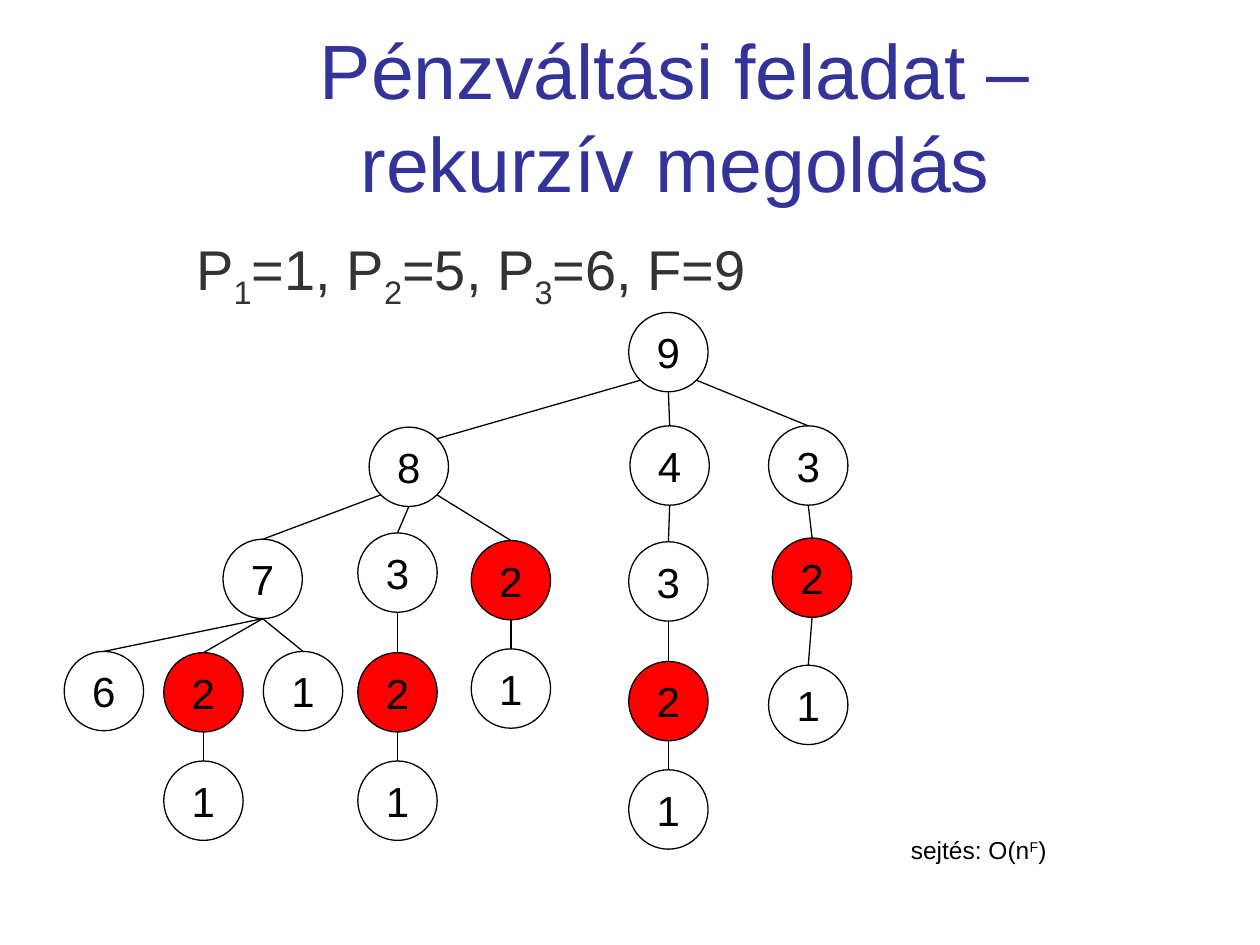
import math
from dataclasses import dataclass

import pptx
import pptx.dml.color
import pptx.enum.shapes
import pptx.enum.text
import pptx.oxml
import pptx.oxml.ns
import pptx.util

Inches = pptx.util.Inches
Align = pptx.enum.text.PP_ALIGN
Anchor = pptx.enum.text.MSO_ANCHOR
Fit = pptx.enum.text.MSO_AUTO_SIZE


@dataclass(frozen=True)
class Theme:
    font: str = "Arial"
    title: str = "333399"
    body: str = "333333"
    ink: str = "000000"
    mark: str = "FF0000"
    head: int = 44
    sub: int = 32
    node: int = 24
    note: int = 14
    line: float = 0.75


THEME = Theme()
SIZE = 0.63  # node diameter

# Each key is the path of amounts from the root; its last digit is the label.
# Values are the left and top of the node within the tree's box.
NODES = {
    "9": (4.48, 0),
    "98": (2.42, 0.91), "94": (4.49, 0.9), "93": (5.59, 0.9),
    "987": (1.26, 1.8), "983": (2.33, 1.75), "982": (3.23, 1.81),
    "943": (4.48, 1.82), "932": (5.62, 1.79),
    "9876": (0, 2.69), "9872": (0.79, 2.7), "9871": (1.58, 2.69),
    "9832": (2.33, 2.7), "9821": (3.23, 2.67),
    "9432": (4.48, 2.77), "9321": (5.59, 2.8),
    "98721": (0.79, 3.56), "98321": (2.33, 3.56), "94321": (4.48, 3.63),
}
# Side where an edge leaves the parent or meets the child: -1 left, 1 right
LEAVE = {"98": -1, "93": 1, "987": -1, "982": 1}
MEET = {"98": 1}


def color(code):
    return pptx.dml.color.RGBColor.from_string(code)


def write(para, text, size, ink, base=0):
    run = para.add_run()
    run.text = text
    run.font.name = THEME.font
    run.font.size = pptx.util.Pt(size)
    run.font.color.rgb = color(ink)
    if base:
        run.font._element.set("baseline", str(base * 1000))


def add_title(slide, box, text):
    title = slide.shapes.title
    title.left, title.top, title.width, title.height = map(Inches, box)
    frame = title.text_frame
    frame.auto_size = Fit.NONE
    frame.vertical_anchor = Anchor.MIDDLE
    para = frame.paragraphs[0]
    para.alignment = Align.CENTER
    write(para, text, THEME.head, THEME.title)


def add_text(slide, box, runs, size, ink, inset=0.05):
    frame = slide.shapes.add_textbox(*map(Inches, box)).text_frame
    frame.word_wrap = False
    frame.margin_top = Inches(inset)
    for text, base in runs:
        write(frame.paragraphs[0], text, size, ink, base)


def add_node(slide, left, top, label):
    kind = pptx.enum.shapes.MSO_SHAPE.OVAL
    node = slide.shapes.add_shape(
        kind, Inches(left), Inches(top), Inches(SIZE), Inches(SIZE))
    node.shadow.inherit = False
    if label == "2":
        node.fill.solid()
        node.fill.fore_color.rgb = color(THEME.mark)
    else:
        node.fill.background()
    node.line.color.rgb = color(THEME.ink)
    node.line.width = pptx.util.Pt(THEME.line)
    frame = node.text_frame
    frame.vertical_anchor = Anchor.MIDDLE
    para = frame.paragraphs[0]
    para.alignment = Align.CENTER
    write(para, label, THEME.node, THEME.ink)


def add_edge(slide, start, end):
    kind = pptx.enum.shapes.MSO_CONNECTOR.STRAIGHT
    edge = slide.shapes.add_connector(kind, *map(Inches, start + end))
    edge.line.color.rgb = color(THEME.ink)
    edge.line.width = pptx.util.Pt(THEME.line)
    edge._element.spPr.append(pptx.oxml.parse_xml(
        "<a:effectLst %s/>" % pptx.oxml.ns.nsdecls("a")))


def rim(left, top, side, down):
    """Point on a node's rim; down is 1 for the lower half, -1 for the upper."""
    half = SIZE / 2
    turn = math.radians(45 * side)
    return (left + half + half * math.sin(turn),
            top + half + half * math.cos(turn) * down)


def add_tree(slide, box):
    left, top = box[:2]
    spots = {key: (left + x, top + y) for key, (x, y) in NODES.items()}
    for key, spot in spots.items():
        add_node(slide, *spot, key[-1])
    for key, spot in spots.items():
        if len(key) > 1:
            start = rim(*spots[key[:-1]], LEAVE.get(key, 0), 1)
            add_edge(slide, start, rim(*spot, MEET.get(key, 0), -1))


def main():
    deck = pptx.Presentation()
    deck.slide_width, deck.slide_height = Inches(10), Inches(7.5)
    slide = deck.slides.add_slide(deck.slide_layouts[5])

    # Title and given values
    add_title(slide, (1.3, 0.29, 8.12, 1.25),
              "Pénzváltási feladat – rekurzív megoldás")
    coins = [("P", 0), ("1", -25), ("=1, P", 0), ("2", -25),
             ("=5, P", 0), ("3", -25), ("=6, F=9", 0)]
    add_text(slide, (1.46, 1.76, 4.67, 0.81), coins,
             THEME.sub, THEME.body, inset=0.1)

    # Recursion tree and its cost
    add_tree(slide, (0.51, 2.48, 6.25, 4.26))
    cost = [("sejtés: O(n", 0), ("F", 30), (")", 0)]
    add_text(slide, (7.13, 6.58, 1.29, 0.34), cost, THEME.note, THEME.ink)

    deck.save("out.pptx")


if __name__ == "__main__":
    main()
